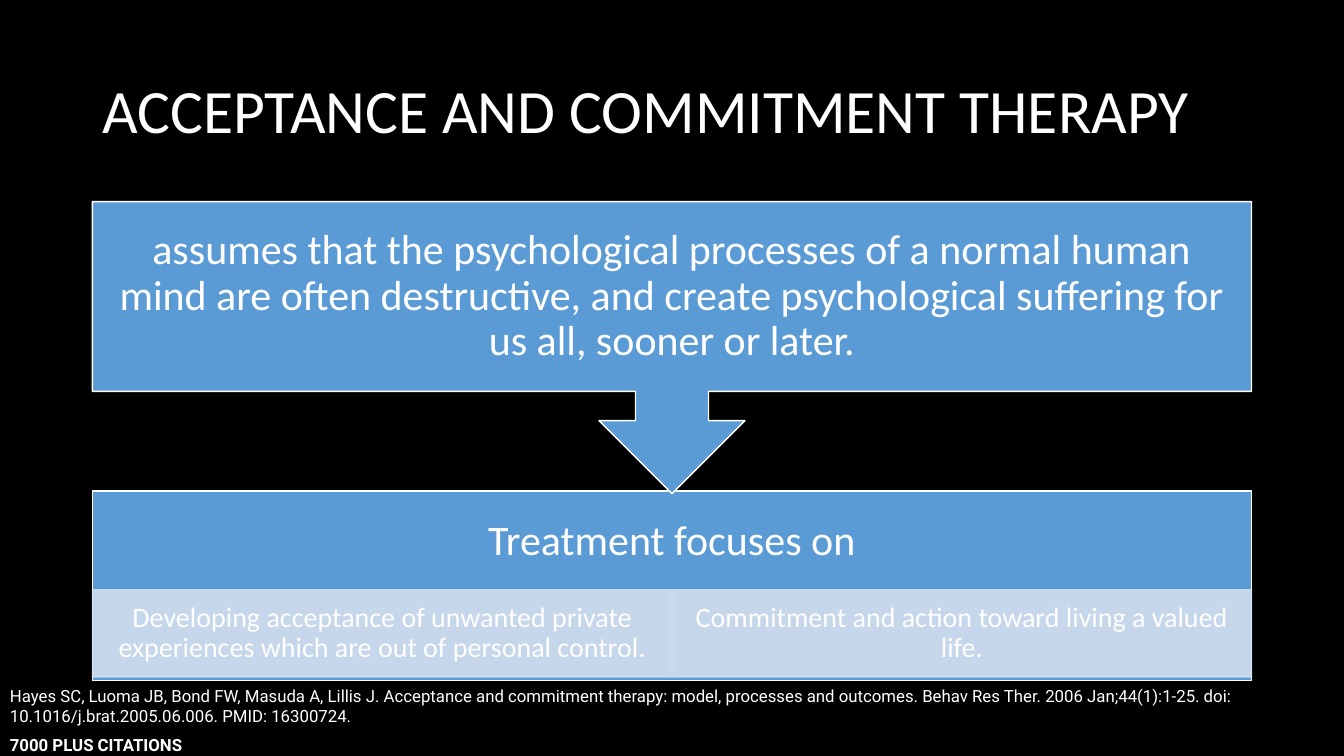
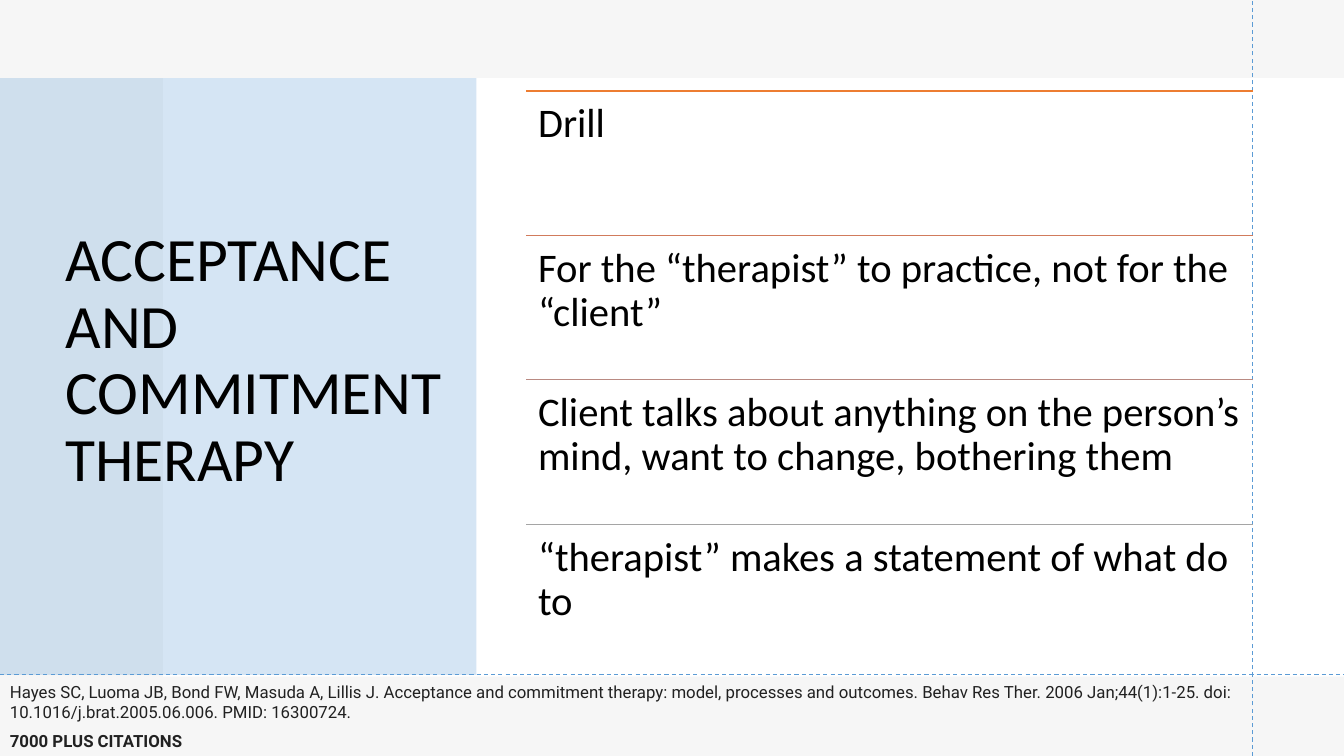
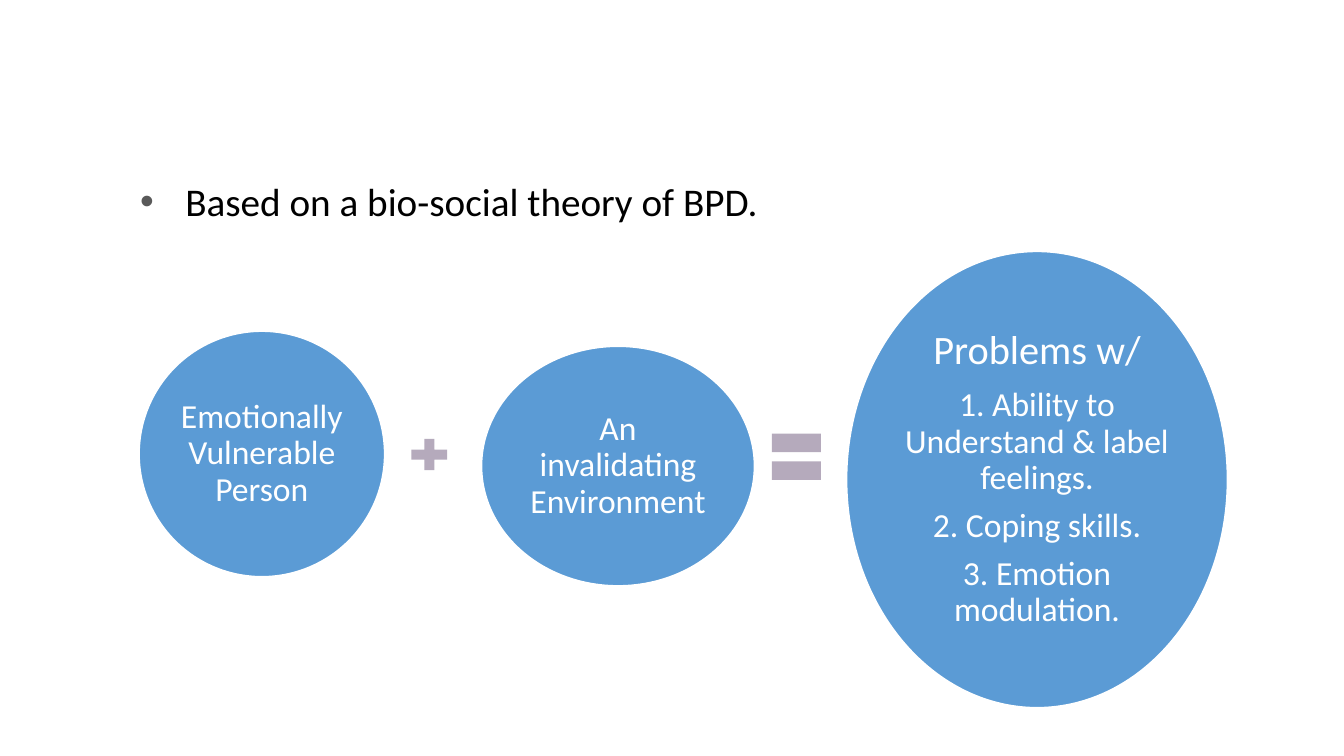
from dataclasses import dataclass

from lxml import etree
from pptx import Presentation
from pptx.dml.color import RGBColor
from pptx.enum.dml import MSO_LINE
from pptx.enum.shapes import MSO_CONNECTOR, MSO_SHAPE
from pptx.enum.text import MSO_ANCHOR, MSO_AUTO_SIZE, PP_ALIGN
from pptx.oxml.ns import qn
from pptx.util import Cm, Pt

RECTANGLE, ELLIPSE = MSO_SHAPE.RECTANGLE, MSO_SHAPE.OVAL
CALLOUT = MSO_SHAPE.DOWN_ARROW_CALLOUT
PLUS, EQUAL = MSO_SHAPE.MATH_PLUS, MSO_SHAPE.MATH_EQUAL
STRAIGHT = MSO_CONNECTOR.STRAIGHT
DASH = MSO_LINE.DASH
LEFT, CENTER = PP_ALIGN.LEFT, PP_ALIGN.CENTER
TOP, MIDDLE = MSO_ANCHOR.TOP, MSO_ANCHOR.MIDDLE

COLORS = {
    "black": "000000",
    "white": "FFFFFF",
    "blue": "5B9BD5",
    "pale blue": "D2DEEF",
    "gray": "E7E6E6",
    "ink": "212121",
    "bullet": "595959",
    "mauve": "B5AABC",
    "rule 1": "ED7D31",
    "rule 2": "D17B5C",
    "rule 3": "B98A82",
    "rule 4": "A5A5A5",
}
WIDTH, HEIGHT = 33.87, 19.05
TITLE_ONLY, TITLE_AND_BODY = 5, 1
TITLE = "ACCEPTANCE AND COMMITMENT THERAPY"
CITATION = (
    "Hayes SC, Luoma JB, Bond FW, Masuda A, Lillis J. Acceptance and commitment "
    "therapy: model, processes and outcomes. Behav Res Ther. 2006 Jan;44(1):1-25. "
    "doi: 10.1016/j.brat.2005.06.006. PMID: 16300724."
)


@dataclass(frozen=True)
class Box:
    """A rectangle in centimetres."""
    left: float
    top: float
    width: float
    height: float

    def lengths(self) -> list:
        return [Cm(value) for value in (self.left, self.top, self.width, self.height)]


@dataclass(frozen=True)
class Line:
    """One paragraph; a size of None takes the size of the whole text."""
    text: str
    size: float | None = None
    bold: bool = False
    before: float = 0


@dataclass(frozen=True)
class Term:
    """One circle of the equation."""
    box: Box
    lines: tuple


@dataclass(frozen=True)
class Row:
    text: str
    rule_color: str


TERMS = (
    Term(Box(3.49, 8.33, 6.22, 6.22), (Line("Emotionally Vulnerable Person"),)),
    Term(Box(12.12, 8.71, 6.91, 6.07), (Line("An invalidating Environment"),)),
    Term(Box(21.32, 6.32, 9.63, 11.53), (
        Line("Problems w/", size=28.8),
        Line("1. Ability to Understand & label feelings.", before=10.1),
        Line("2. Coping skills.", before=8.4),
        Line("3. Emotion modulation.", before=8.4),
    )),
)
ROWS = (
    Row("Drill", "rule 1"),
    Row("For the “therapist” to practice, not for the “client”", "rule 2"),
    Row("Client talks about anything on the person’s mind, want to change, "
        "bothering them", "rule 3"),
    Row("“therapist” makes a statement of what do to", "rule 4"),
)
FOCUS_POINTS = (
    "Developing acceptance of unwanted private experiences which are out of "
    "personal control.",
    "Commitment and action toward living a valued life.",
)


def rgb(name: str) -> RGBColor:
    return RGBColor.from_string(COLORS[name])


def write_text(shape, *lines, size: float, color: str, font: str = "Calibri",
               align=LEFT, anchor=TOP, insets=(0.25, 0.13, 0.25, 0.13),
               spacing: float | None = 0.9) -> None:
    """Fill a shape with lines; insets are left, top, right, bottom in cm."""
    frame = shape.text_frame
    frame.word_wrap = True
    frame.auto_size = MSO_AUTO_SIZE.NONE
    frame.vertical_anchor = anchor
    (frame.margin_left, frame.margin_top,
     frame.margin_right, frame.margin_bottom) = [Cm(inset) for inset in insets]
    for index, line in enumerate(lines):
        paragraph = frame.add_paragraph() if index else frame.paragraphs[0]
        paragraph.alignment = align
        paragraph.line_spacing = spacing
        paragraph.space_before = Pt(line.before)
        run = paragraph.add_run()
        run.text = line.text
        run.font.name = font
        run.font.size = Pt(line.size or size)
        run.font.bold = line.bold
        run.font.color.rgb = rgb(color)


def add_shape(slide, kind, box: Box, fill: str, line: str | None = None,
              line_width: float = 1, opacity: int = 100):
    shape = slide.shapes.add_shape(kind, *box.lengths())
    shape.shadow.inherit = False
    shape.fill.solid()
    shape.fill.fore_color.rgb = rgb(fill)
    if line:
        shape.line.color.rgb = rgb(line)
        shape.line.width = Pt(line_width)
    else:
        shape.line.fill.background()
    if opacity < 100:
        for color in shape._element.spPr.iter(qn("a:srgbClr")):
            etree.SubElement(color, qn("a:alpha"), val=str(opacity * 1000))
    return shape


def add_line(slide, start: tuple, end: tuple, color: str, width: float = 1,
             dash=None) -> None:
    points = [Cm(value) for value in (*start, *end)]
    connector = slide.shapes.add_connector(STRAIGHT, *points)
    connector.line.color.rgb = rgb(color)
    connector.line.width = Pt(width)
    if dash:
        connector.line.dash_style = dash
    etree.SubElement(connector._element.spPr, qn("a:effectLst"))


def add_slide(presentation, layout: int, background: str):
    slide = presentation.slides.add_slide(presentation.slide_layouts[layout])
    slide.background.fill.solid()
    slide.background.fill.fore_color.rgb = rgb(background)
    return slide


def place(shape, box: Box) -> None:
    shape.left, shape.top, shape.width, shape.height = box.lengths()


def set_title(slide, box: Box, color: str) -> None:
    title = slide.shapes.title
    place(title, box)
    write_text(title, Line(TITLE), size=44, color=color, anchor=MIDDLE)


def add_citation(slide, top: float, color: str) -> None:
    text_box = slide.shapes.add_textbox(*Box(0, top, WIDTH, 1.9).lengths())
    write_text(text_box, Line(CITATION), Line("7000 PLUS CITATIONS", bold=True, before=6),
               size=12, color=color, font="Roboto", spacing=None)


def set_bullet(paragraph, indent: float) -> None:
    properties = paragraph._p.get_or_add_pPr()
    properties.set("marL", str(Cm(indent)))
    properties.set("indent", str(-Cm(indent)))
    bullet_color = etree.SubElement(properties, qn("a:buClr"))
    etree.SubElement(bullet_color, qn("a:srgbClr"), val=COLORS["bullet"])
    etree.SubElement(properties, qn("a:buFont"), typeface="Arial")
    etree.SubElement(properties, qn("a:buChar"), char="•")


def build_assumption_slide(presentation) -> None:
    slide = add_slide(presentation, TITLE_ONLY, "black")
    left, width = 2.33, 29.21
    set_title(slide, Box(left, 1.01, width, 3.68), "white")
    add_citation(slide, 17.15, "white")

    focus = add_shape(slide, RECTANGLE, Box(left, 12.37, width, 4.78), "blue", "white")
    write_text(focus, Line("Treatment focuses on"), size=30, color="white", align=CENTER,
               anchor=MIDDLE, insets=(0.58, 0.58, 0.58, 2.77))
    point_width = width / len(FOCUS_POINTS)
    for index, text in enumerate(FOCUS_POINTS):
        box = Box(left + index * point_width, 14.86, point_width, 2.2)
        point = add_shape(slide, RECTANGLE, box, "pale blue", "pale blue", opacity=90)
        write_text(point, Line(text), size=20, color="white", align=CENTER,
                   anchor=MIDDLE, insets=(0.41, 0.08, 0.41, 0.08))

    assumption = add_shape(slide, CALLOUT, Box(left, 5.08, width, 7.36), "blue", "white")
    write_text(assumption, Line(
        "assumes that the psychological processes of a normal human mind are often "
        "destructive, and create psychological suffering for us all, sooner or later."),
        size=30, color="white", align=CENTER, anchor=MIDDLE, insets=(0.58,) * 4)


def build_drill_slide(presentation) -> None:
    slide = add_slide(presentation, TITLE_ONLY, "white")
    left, right, top, row_height = 13.26, 31.57, 2.29, 3.64
    add_shape(slide, RECTANGLE, Box(0, 0, WIDTH, HEIGHT), "gray", opacity=35)
    add_shape(slide, RECTANGLE, Box(4.11, 1.97, WIDTH - 4.11, 15.08), "white")
    add_shape(slide, RECTANGLE, Box(0, 1.97, 12.01, 15.04), "blue", opacity=25)
    # The title placeholder goes above the panels just drawn.
    slide.shapes._spTree.append(slide.shapes.title._element)
    set_title(slide, Box(1.4, 1.88, 10.03, 14.45), "black")
    add_line(slide, (right, HEIGHT), (right, 0), "blue", 0.75, DASH)
    add_line(slide, (0, 17), (WIDTH, 17), "blue", 0.75, DASH)
    add_citation(slide, 17.05, "ink")

    for index, row in enumerate(ROWS):
        row_top = top + index * row_height
        add_line(slide, (left, row_top), (right, row_top), row.rule_color)
        box = Box(left, row_top, right - left, row_height)
        text_box = slide.shapes.add_textbox(*box.lengths())
        write_text(text_box, Line(row.text), size=29, color="black", insets=(0.3,) * 4)


def build_theory_slide(presentation) -> None:
    slide = add_slide(presentation, TITLE_AND_BODY, "white")
    title = slide.shapes.title._element
    title.getparent().remove(title)
    body = slide.placeholders[1]
    place(body, Box(3.23, 4.45, 27.43, 12.57))
    write_text(body, Line("Based on a bio-social theory of BPD."), size=28,
               color="black", insets=(0.3, 0.15, 0.3, 0.15))
    set_bullet(body.text_frame.paragraphs[0], 1.14)

    for term in TERMS:
        circle = add_shape(slide, ELLIPSE, term.box, "blue", "white", 2)
        write_text(circle, *term.lines, size=24, color="white", align=CENTER,
                   anchor=MIDDLE, insets=(0.08,) * 4)
    add_shape(slide, PLUS, Box(10.21, 10.92, 1.22, 1.07), "mauve")
    add_shape(slide, EQUAL, Box(19.23, 10.52, 1.68, 1.98), "mauve")


def main() -> None:
    presentation = Presentation()
    presentation.slide_width, presentation.slide_height = Cm(WIDTH), Cm(HEIGHT)
    build_assumption_slide(presentation)
    build_drill_slide(presentation)
    build_theory_slide(presentation)
    presentation.save("out.pptx")


if __name__ == "__main__":
    main()
